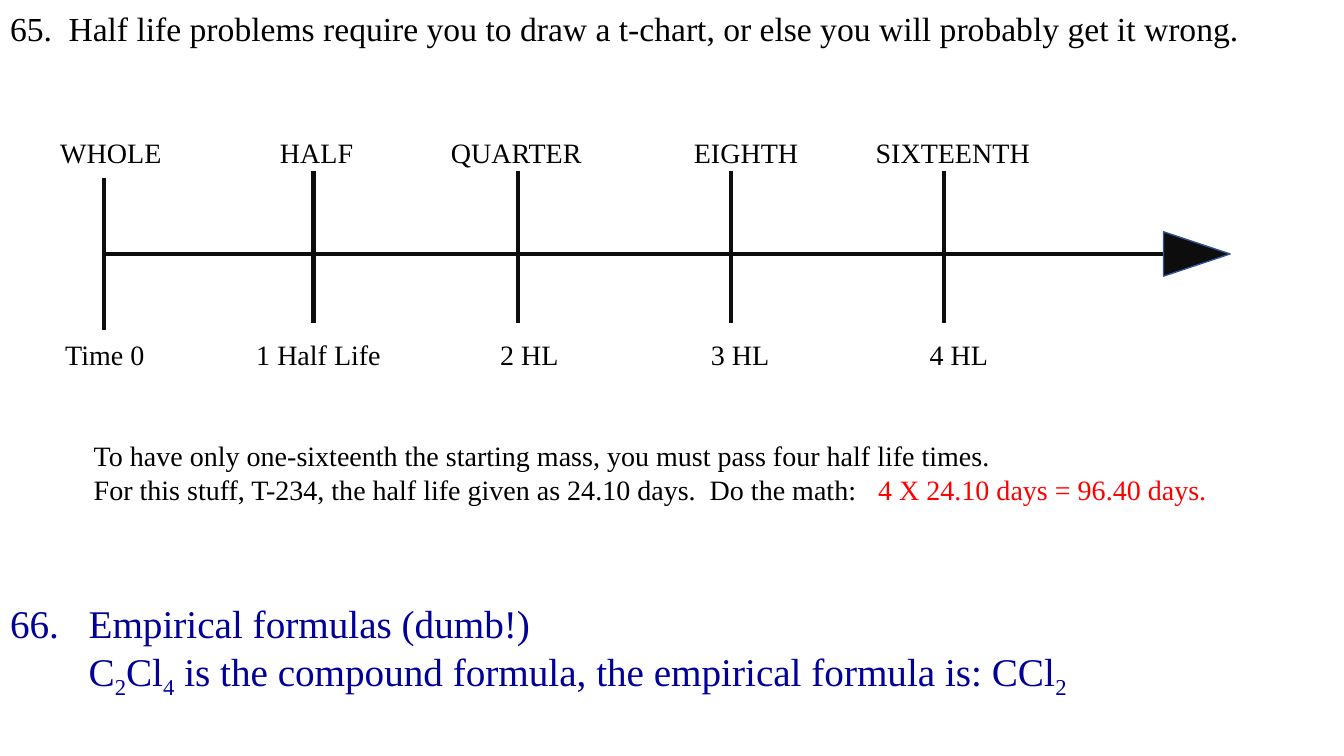
from pptx import Presentation
from pptx.dml.color import RGBColor as RGB
from pptx.enum.shapes import MSO_CONNECTOR as CON, MSO_SHAPE as SHP
from pptx.enum.text import PP_ALIGN as AL
from pptx.oxml.ns import qn
from pptx.util import Inches, Pt
from lxml.etree import SubElement as Sub

INK = {"text": "000000", "line": "0D0D0D", "edge": "325491",
       "red": "FF0000", "blue": "000099"}


class Board:
    font = "Times New Roman"

    def __init__(self, deck):
        self.slide = deck.slides.add_slide(deck.slide_layouts[6])

    def color(self, name):
        return RGB.from_string(INK[name])

    def text(self, left, top, width, height, lines, size,
             ink="text", align=AL.LEFT, tab=None):
        box = self.slide.shapes.add_textbox(
            Inches(left), Inches(top), Inches(width), Inches(height))
        frame = box.text_frame
        frame.word_wrap = True
        frame.margin_left = frame.margin_right = 0
        frame.margin_top = frame.margin_bottom = 0
        for i, line in enumerate(lines):
            para = frame.add_paragraph() if i else frame.paragraphs[0]
            para.alignment = align
            if tab:
                stops = Sub(para._p.get_or_add_pPr(), qn("a:tabLst"))
                Sub(stops, qn("a:tab"), pos=str(Inches(tab)), algn="l")
            for words, *style in line:
                run = para.add_run()
                run.text = words
                run.font.name = self.font
                run.font.size = Pt(size)
                run.font.color.rgb = self.color("red" if "red" in style else ink)
                if "sub" in style:
                    run._r.get_or_add_rPr().set("baseline", "-25000")

    def label(self, mid, top, words):
        self.text(mid - 1, top, 2, 0.32, [[(words,)]], 20, align=AL.CENTER)

    def line(self, x1, y1, x2, y2, width, arrow=False):
        rule = self.slide.shapes.add_connector(
            CON.STRAIGHT, Inches(x1), Inches(y1), Inches(x2), Inches(y2))
        rule.line.color.rgb = self.color("line")
        rule.line.width = Pt(width)
        if arrow:
            Sub(rule.line._get_or_add_ln(), qn("a:tailEnd"), type="triangle")
        Sub(rule._element.spPr, qn("a:effectLst"))

    def head(self, left, top, width, height):
        tip = self.slide.shapes.add_shape(
            SHP.ISOSCELES_TRIANGLE, Inches(left), Inches(top),
            Inches(width), Inches(height))
        tip.rotation = 90
        tip.shadow.inherit = False
        tip.fill.solid()
        tip.fill.fore_color.rgb = self.color("line")
        tip.line.color.rgb = self.color("edge")
        tip.line.width = Pt(1)


def main():
    deck = Presentation()
    deck.slide_width, deck.slide_height = Inches(13.33), Inches(7.5)
    board = Board(deck)

    board.text(0.1, 0.08, 13.1, 0.4, [[(
        "65.\tHalf life problems require you to draw a t-chart, "
        "or else you will probably get it wrong.",)]], 24, tab=0.58)

    marks = [
        (1.03, 1.77, 1.1, "WHOLE", 1.04, "Time 0"),
        (3.11, 1.7, 3.14, "HALF", 3.16, "1 Half Life"),
        (5.14, 1.7, 5.12, "QUARTER", 5.25, "2 HL"),
        (7.25, 1.7, 7.4, "EIGHTH", 7.34, "3 HL"),
        (9.36, 1.7, 9.45, "SIXTEENTH", 9.51, "4 HL"),
    ]
    for x, top, part_x, part, time_x, time in marks:
        board.label(part_x, 1.34, part)
        board.label(time_x, 3.35, time)
        board.line(x, top, x, top + 1.5, 3)
    board.line(1.03, 2.52, 11.96, 2.52, 2.25, arrow=True)
    board.head(11.65, 2.19, 0.44, 0.66)

    board.text(0.93, 4.35, 12.2, 0.65, [
        [("To have only one-sixteenth the starting mass, "
          "you must pass four half life times.",)],
        [("For this stuff, T-234, the half life given as 24.10 days.  "
          "Do the math:\t",),
         ("4 X 24.10 days = 96.40 days.", "red")],
    ], 20, tab=7.78)

    board.text(0.1, 5.95, 13.1, 0.95, [
        [("66.\tEmpirical formulas (dumb!)",)],
        [("\tC",), ("2", "sub"), ("Cl",), ("4", "sub"),
         (" is the compound formula, the empirical formula is: CCl",),
         ("2", "sub")],
    ], 28, ink="blue", tab=0.78)

    deck.save("out.pptx")


if __name__ == "__main__":
    main()
